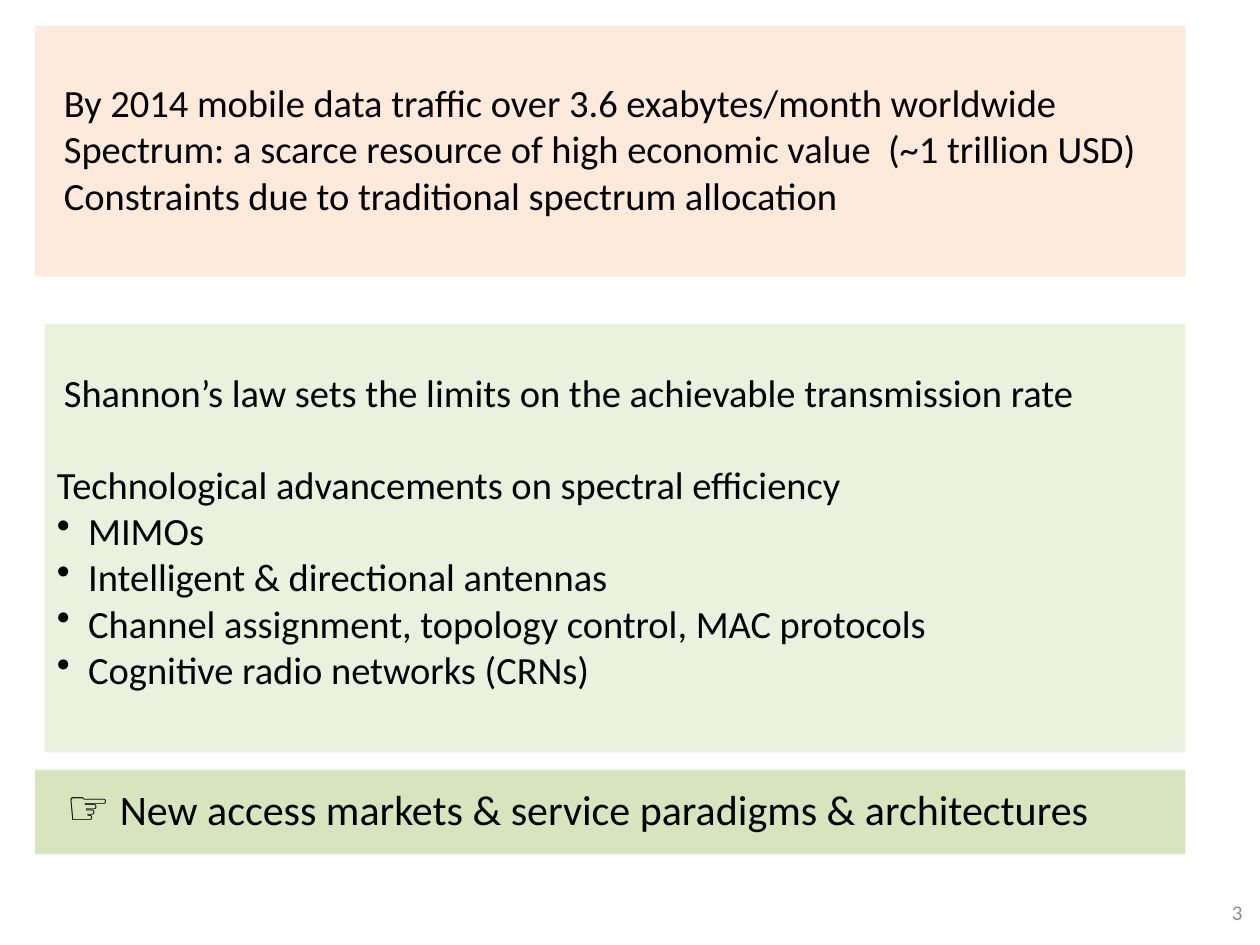
from pptx import Presentation
from pptx.dml.color import RGBColor
from pptx.enum.shapes import MSO_SHAPE as Shape
from pptx.enum.text import MSO_ANCHOR as Anchor, PP_ALIGN as Align
from pptx.oxml.ns import qn
from pptx.util import Cm, Pt

BLACK = RGBColor(0x00, 0x00, 0x00)
GRAY = RGBColor(0x8C, 0x8C, 0x8C)
PEACH = RGBColor(0xFD, 0xEA, 0xDA)
PALE_GREEN = RGBColor(0xEB, 0xF1, 0xDE)
GREEN = RGBColor(0xD7, 0xE4, 0xBD)

FONT = "Calibri"
PANEL_RIGHT = 23.9
BULLET_INDENT = 0.63

TRAFFIC = [
    "By 2014 mobile data traffic over 3.6 exabytes/month worldwide",
    "Spectrum: a scarce resource of high economic value  (~1 trillion USD)",
    "Constraints due to traditional spectrum allocation",
]
ADVANCES = [
    "MIMOs",
    "Intelligent & directional antennas",
    "Channel assignment, topology control, MAC protocols",
    "Cognitive radio networks (CRNs)",
]


def add_panel(slide, left, top, height, color, top_inset=0.13):
    """Add a filled panel reaching the common right edge; return its text frame."""
    panel = slide.shapes.add_shape(
        Shape.RECTANGLE, Cm(left), Cm(top), Cm(PANEL_RIGHT - left), Cm(height))
    panel.shadow.inherit = False
    panel.fill.solid()
    panel.fill.fore_color.rgb = color
    panel.line.fill.background()
    frame = panel.text_frame
    frame.word_wrap = True
    frame.vertical_anchor = Anchor.TOP
    frame.margin_top = Cm(top_inset)
    return frame


def format_font(font, size, color=BLACK):
    font.name = FONT
    font.size = Pt(size)
    font.color.rgb = color


def add_line(frame, text, size=22, indent=0.0, hanging=0.0):
    """Fill the frame's empty first paragraph, or append a new one."""
    paragraph = frame.paragraphs[0]
    if paragraph.runs:
        paragraph = frame.add_paragraph()
    paragraph.alignment = Align.LEFT
    format_font(paragraph.font, size)
    properties = paragraph._p.get_or_add_pPr()
    properties.set("marL", str(Cm(indent)))
    properties.set("indent", str(Cm(-hanging)))
    paragraph.add_run().text = text
    return paragraph


def add_bullet(frame, text):
    paragraph = add_line(frame, text, indent=BULLET_INDENT, hanging=BULLET_INDENT)
    properties = paragraph._p.get_or_add_pPr()
    bullet = properties.makeelement(qn("a:buChar"), {"char": "•"})
    properties.insert_element_before(bullet, "a:tabLst", "a:defRPr", "a:extLst")


def add_slide_number(slide, number):
    box = slide.shapes.add_textbox(Cm(24.3), Cm(18.14), Cm(1), Cm(0.5))
    frame = box.text_frame
    frame.word_wrap = True
    frame.vertical_anchor = Anchor.MIDDLE
    frame.margin_top = frame.margin_bottom = 0
    paragraph = frame.paragraphs[0]
    paragraph.alignment = Align.RIGHT
    format_font(paragraph.font, 12, GRAY)
    paragraph.add_run().text = str(number)


def main():
    presentation = Presentation()
    presentation.slide_width = Cm(25.4)
    presentation.slide_height = Cm(19.05)
    slide = presentation.slides.add_slide(presentation.slide_layouts[6])

    traffic = add_panel(slide, 0.71, 0.53, 5.05, PEACH, top_inset=1.07)
    for text in TRAFFIC:
        add_line(traffic, text, indent=0.33)

    efficiency = add_panel(slide, 0.9, 6.53, 8.64, PALE_GREEN, top_inset=0.9)
    add_line(efficiency, "Shannon’s law sets the limits on the achievable transmission rate",
             indent=0.14)
    heading = add_line(efficiency, "Technological advancements on spectral efficiency")
    heading.space_before = Pt(26.5)
    for text in ADVANCES:
        add_bullet(efficiency, text)

    markets = add_panel(slide, 0.71, 15.52, 1.7, GREEN)
    conclusion = add_line(markets, "☞", size=24, indent=0.38)
    conclusion.runs[0].font.size = Pt(28)
    conclusion.add_run().text = " New access markets & service paradigms & architectures"

    add_slide_number(slide, 3)
    presentation.save("out.pptx")


if __name__ == "__main__":
    main()
